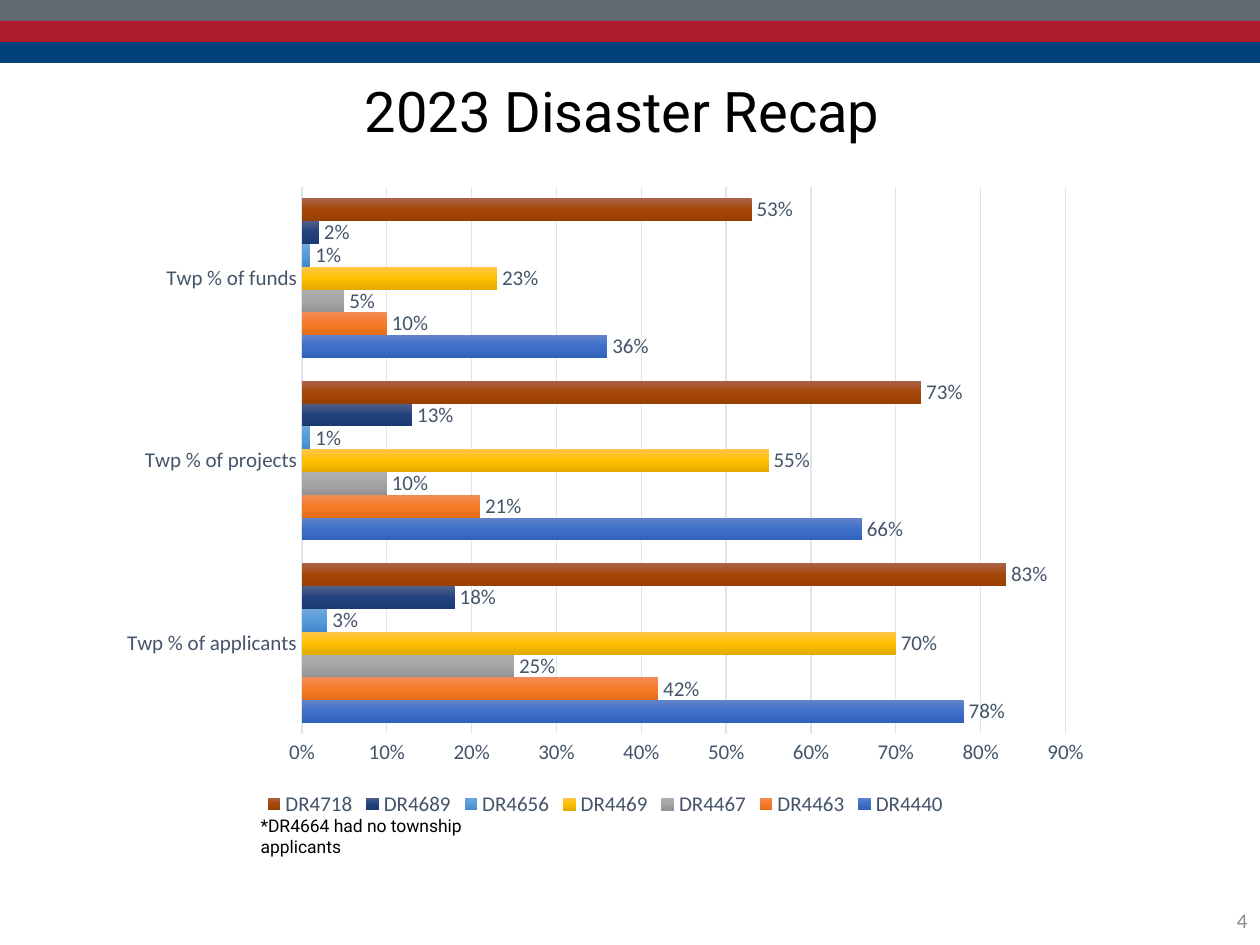
from lxml import etree
from pptx import Presentation
from pptx.chart.data import CategoryChartData
from pptx.dml.color import RGBColor
from pptx.enum import chart as ch, text
from pptx.oxml.ns import qn
from pptx.util import Inches, Pt

GRAY = RGBColor(0x63, 0x6A, 0x70)
RED = RGBColor(0xAF, 0x1C, 0x2E)
BLUE = RGBColor(0x00, 0x41, 0x7B)
BLACK = RGBColor(0x00, 0x00, 0x00)
SLATE = RGBColor(0x44, 0x54, 0x6A)
GRID = RGBColor(0xE0, 0xE5, 0xEB)
PAGE_GRAY = RGBColor(0x8C, 0x8C, 0x8C)

# Disaster number: township shares, gradient from top to bottom of the bar
DISASTERS = {
    "DR4440": ((0.78, 0.66, 0.36), ("6183CB", "3E70CA", "3062BB")),
    "DR4463": ((0.42, 0.21, 0.10), ("F18C57", "F67B28", "E56C19")),
    "DR4467": ((0.25, 0.10, 0.05), ("AFAFAF", "A5A5A5", "939393")),
    "DR4469": ((0.70, 0.55, 0.23), ("FFC64B", "FFC000", "E3AB00")),
    "DR4656": ((0.03, 0.01, 0.01), ("71A6DB", "559BDB", "448ACA")),
    "DR4689": ((0.18, 0.13, 0.02), ("516089", "22427D", "1A3A72")),
    "DR4718": ((0.83, 0.73, 0.53), ("AB634B", "A54707", "983E00")),
}


def add_text(wording, left, top, width, height, font_name, size, color):
    box = slide.shapes.add_textbox(Inches(left), Inches(top), Inches(width), Inches(height))
    box.text_frame.word_wrap = True
    paragraph = box.text_frame.paragraphs[0]
    paragraph.text = wording
    paragraph.font.name = font_name
    paragraph.font.size = Pt(size)
    paragraph.font.color.rgb = color
    return box.text_frame


def fill_gradient(bar_format, stops):
    """Fill with evenly spaced stops running downwards; python-pptx only offers two."""
    bar_format.fill.gradient()
    gradient = bar_format.fill._xPr.find(qn("a:gradFill"))
    stop_list = gradient.find(qn("a:gsLst"))
    for default_stop in list(stop_list):
        stop_list.remove(default_stop)
    for index, color in enumerate(stops):
        stop = etree.SubElement(stop_list, qn("a:gs"), pos=str(index * 50000))
        etree.SubElement(stop, qn("a:srgbClr"), val=color)
    gradient.find(qn("a:lin")).set("ang", "5400000")


prs = Presentation()
prs.slide_width, prs.slide_height = Inches(10), Inches(7.5)
slide = prs.slides.add_slide(prs.slide_layouts[6])

# Header stripes
stripe_height = Inches(0.5) // 3
for row, color in enumerate((GRAY, RED, BLUE)):
    stripe = slide.shapes.add_shape(1, 0, row * stripe_height, prs.slide_width, stripe_height)
    stripe.shadow.inherit = False
    stripe.fill.solid()
    stripe.fill.fore_color.rgb = color
    stripe.line.fill.background()

title = add_text("2023 Disaster Recap", 0.62, 0.62, 8.64, 1.02, "Roboto", 32, BLACK)
title.paragraphs[0].alignment = text.PP_ALIGN.CENTER
title.paragraphs[0].line_spacing = 0.9

page_number = add_text("4", 7.67, 7.1, 2.33, 0.4, "Calibri", 12, PAGE_GRAY)
page_number.vertical_anchor = text.MSO_ANCHOR.MIDDLE
page_number.paragraphs[0].alignment = text.PP_ALIGN.RIGHT

# Township shares by disaster
shares = CategoryChartData(number_format="0%")
shares.categories = ["Twp % of applicants", "Twp % of projects", "Twp % of funds"]
for disaster, (values, _) in DISASTERS.items():
    shares.add_series(disaster, values)
chart = slide.shapes.add_chart(
    ch.XL_CHART_TYPE.BAR_CLUSTERED,
    Inches(0.85), Inches(1.38), Inches(7.91), Inches(5.14), shares,
).chart
chart.has_title = False
chart.font.name = "Calibri"
chart.font.size = Pt(12)
chart.font.color.rgb = SLATE
chart.has_legend = True
chart.legend.position = ch.XL_LEGEND_POSITION.BOTTOM
chart.legend.include_in_layout = False

categories, percents = chart.category_axis, chart.value_axis
for axis in (categories, percents):
    axis.major_tick_mark = axis.minor_tick_mark = ch.XL_TICK_MARK.NONE
percents.minimum_scale, percents.maximum_scale, percents.major_unit = 0, 0.9, 0.1
percents.tick_labels.number_format = "0%"
percents.tick_labels.number_format_is_linked = False
percents.format.line.fill.background()
for line in (categories.format.line, percents.major_gridlines.format.line):
    line.color.rgb = GRID
    line.width = Pt(0.75)

plot = chart.plots[0]
plot.gap_width = 100
plot.overlap = 0
plot.vary_by_categories = False
for series, (_, stops) in zip(plot.series, DISASTERS.values()):
    fill_gradient(series.format, stops)
    labels = series.data_labels
    labels.show_value = True
    labels.position = ch.XL_LABEL_POSITION.OUTSIDE_END
    labels.number_format = "0%"
    labels.number_format_is_linked = False
    labels.font.name = "Calibri"
    labels.font.size = Pt(12)
    labels.font.color.rgb = SLATE

add_text("*DR4664 had no township applicants", 1.97, 6.42, 2.36, 0.27, "Roboto", 10, BLACK)

prs.save("out.pptx")
